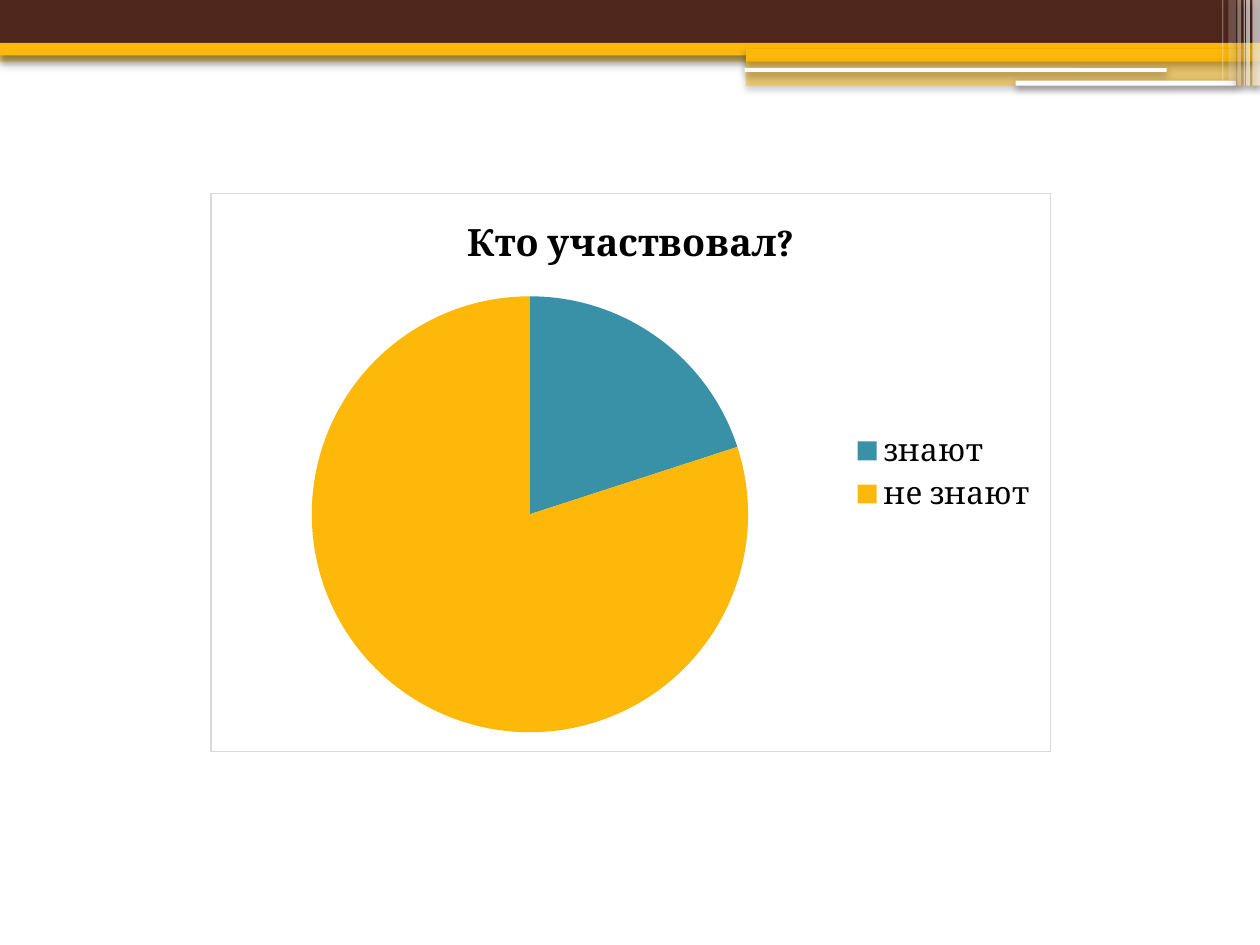
"""Build a slide with a banded header and a pie chart of survey answers."""
import pptx
import pptx.chart.data
import pptx.dml.color
import pptx.enum.chart
import pptx.enum.shapes
import pptx.oxml
import pptx.oxml.ns
import pptx.util

Inches = pptx.util.Inches
Pt = pptx.util.Pt
qn = pptx.oxml.ns.qn
SHAPE = pptx.enum.shapes.MSO_SHAPE
NS = pptx.oxml.ns.nsdecls("a", "c")

DARK, GOLD, TEAL, WHITE = "4F271C", "FEB80A", "3891A7", "FFFFFF"
BLACK, GREY = "000000", "D9D9D9"

BANDS = [
    (0, 0.4, 10, 0.09, GOLD, 50),
    (0, 0, 10, 0.34, DARK, 100),
    (0, 0.34, 10, 0.1, GOLD, 100),
    (5.92, 0.39, 4.08, 0.1, GOLD, 100),
    (5.92, 0.48, 4.08, 0.2, GOLD, 50),
]
RULES = [(5.91, 0.54, 3.35, 0.03), (8.06, 0.64, 1.75, 0.04)]
STRIPES = [
    (9.94, 0.06, 0.68, 65),
    (9.89, 0.03, 0.68, 65),
    (9.87, 0.01, 0.68, 60),
    (9.82, 0.03, 0.68, 40),
    (9.75, 0.06, 0.64, 20),
    (9.7, 0.01, 0.64, 30),
]


def rgb(value):
    return pptx.dml.color.RGBColor.from_string(value)


def set_font(font, color=BLACK, **values):
    for name, value in values.items():
        setattr(font, name, value)
    font.color.rgb = rgb(color)


class SlideBuilder:
    font = "Cambria"
    title_format = {"name": font, "size": Pt(21.6), "bold": True}
    legend_format = {"name": font, "size": Pt(18)}
    chart_format = {"name": "Arial", "size": Pt(10)}

    def __init__(self, slide):
        self.s = slide

    def bar(self, x, y, w, h, color, alpha=100, kind=SHAPE.RECTANGLE):
        sp = self.s.shapes.add_shape(kind, Inches(x), Inches(y), Inches(w), Inches(h))
        sp.fill.solid()
        sp.fill.fore_color.rgb = rgb(color)
        sp.line.fill.background()
        if alpha < 100:
            clr = sp.element.spPr.find(qn("a:solidFill")).find(qn("a:srgbClr"))
            clr.append(pptx.oxml.parse_xml(f'<a:alpha {NS} val="{alpha * 1000}"/>'))
        self.shadow(sp)

    def shadow(self, sp):
        sp.shadow.inherit = False
        sp.element.spPr.find(qn("a:effectLst")).append(pptx.oxml.parse_xml(
            f'<a:outerShdw {NS} blurRad="{Pt(4.1)}" dist="{Pt(2)}" dir="5400000" '
            f'algn="ctr" rotWithShape="0"><a:srgbClr val="{BLACK}">'
            '<a:alpha val="40000"/></a:srgbClr></a:outerShdw>'))

    def pie(self, x, y, w, h, title, values, colors):
        data = pptx.chart.data.CategoryChartData()
        data.categories = list(values)
        data.add_series(title, list(values.values()))
        chart = self.s.shapes.add_chart(
            pptx.enum.chart.XL_CHART_TYPE.PIE,
            Inches(x), Inches(y), Inches(w), Inches(h), data).chart
        set_font(chart.font, **self.chart_format)
        chart.has_title = True
        tf = chart.chart_title.text_frame
        tf.text = title
        set_font(tf.paragraphs[0].runs[0].font, **self.title_format)
        chart.chart_title.include_in_layout = False
        chart.has_legend = True
        chart.legend.position = pptx.enum.chart.XL_LEGEND_POSITION.RIGHT
        chart.legend.include_in_layout = False
        set_font(chart.legend.font, **self.legend_format)
        plot = chart.plots[0]
        plot.vary_by_categories = True
        for i, color in enumerate(colors):
            fill = plot.series[0].points[i].format.fill
            fill.solid()
            fill.fore_color.rgb = rgb(color)
        self.plot_layout(chart, x=0.12, y=0.18, w=0.52, h=0.79)
        self.chart_border(chart, GREY, 0.75)

    def plot_layout(self, chart, **box):
        area = chart.element.find(qn("c:chart")).find(qn("c:plotArea"))
        for old in area.findall(qn("c:layout")):
            area.remove(old)
        sizes = "".join(f'<c:{k} val="{v}"/>' for k, v in box.items())
        area.insert(0, pptx.oxml.parse_xml(
            f'<c:layout {NS}><c:manualLayout><c:layoutTarget val="inner"/>'
            f'<c:xMode val="edge"/><c:yMode val="edge"/>{sizes}'
            '</c:manualLayout></c:layout>'))

    def chart_border(self, chart, color, width):
        chart.element.find(qn("c:chart")).addnext(pptx.oxml.parse_xml(
            f'<c:spPr {NS}><a:noFill/><a:ln w="{Pt(width)}"><a:solidFill>'
            f'<a:srgbClr val="{color}"/></a:solidFill></a:ln></c:spPr>'))


def main():
    prs = pptx.Presentation()
    prs.slide_width, prs.slide_height = Inches(10), Inches(7.5)
    builder = SlideBuilder(prs.slides.add_slide(prs.slide_layouts[6]))
    for band in BANDS:
        builder.bar(*band)
    for rule in RULES:
        builder.bar(*rule, WHITE, kind=SHAPE.ROUNDED_RECTANGLE)
    for x, w, h, alpha in STRIPES:
        builder.bar(x, 0, w, h, WHITE, alpha)
    builder.pie(1.67, 1.53, 6.67, 4.44, "Кто участвовал?",
                {"знают": 20, "не знают": 80}, [TEAL, GOLD])
    prs.save("out.pptx")


if __name__ == "__main__":
    main()
